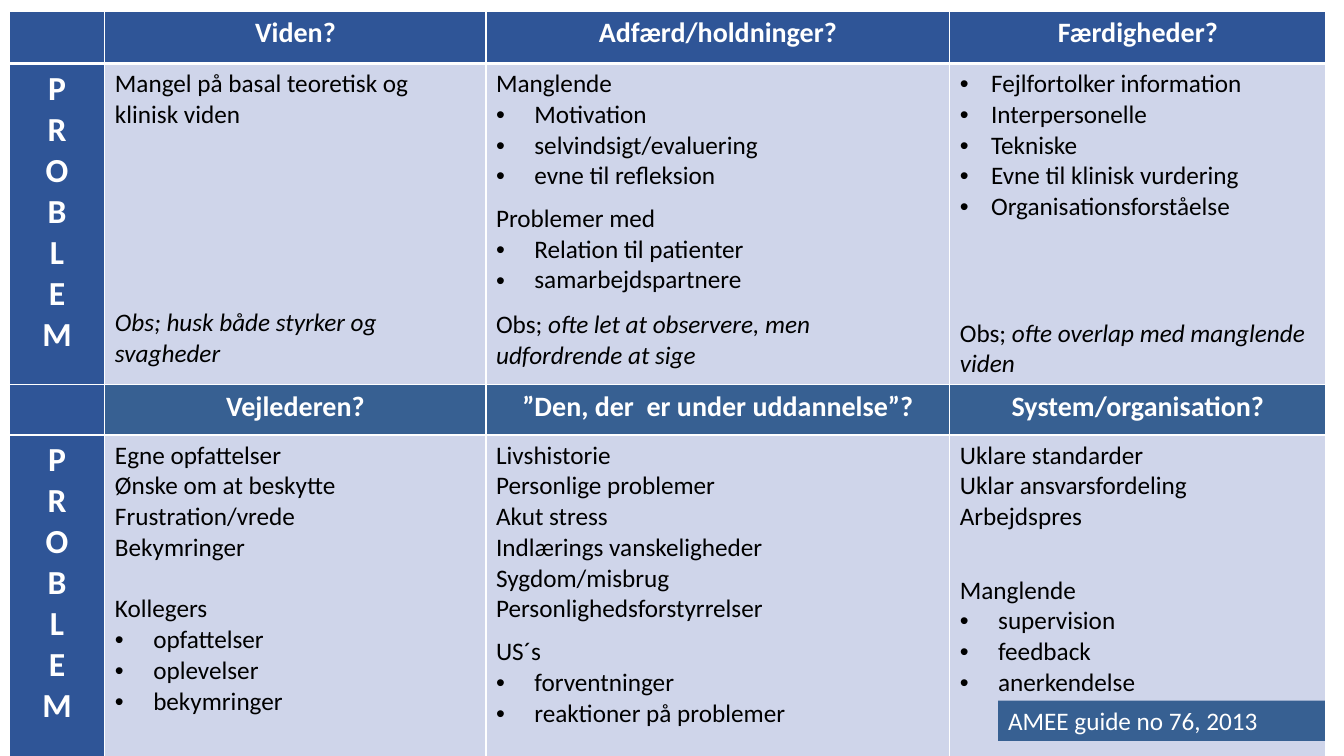
from dataclasses import dataclass

from lxml.etree import SubElement
from pptx import Presentation
from pptx.dml.color import RGBColor
from pptx.enum.shapes import MSO_SHAPE
from pptx.enum.text import MSO_ANCHOR, PP_ALIGN
from pptx.oxml.ns import qn
from pptx.util import Inches, Pt

FONT = "Calibri"
WHITE = RGBColor(0xFF, 0xFF, 0xFF)
BLACK = RGBColor(0x00, 0x00, 0x00)
NAVY = RGBColor(0x2F, 0x55, 0x97)
STEEL = RGBColor(0x37, 0x60, 0x92)
PALE = RGBColor(0xCF, 0xD5, 0xEA)

COLUMN_WIDTHS = [0.95, 3.78, 4.6, 3.73]
ROW_HEIGHTS = [0.52, 2.88, 0.5, 3.2]
SIDE_LABEL = "PROBLEM"


@dataclass
class Line:
    text: str
    gap: float = 0  # points above the line
    indent: float = 0  # bullet indent in inches
    lead: str = ""  # upright words before italic text
    italic: bool = False


def bullets(*texts, indent=0.38):
    return [Line(text, indent=indent) for text in texts]


def plain(*texts):
    return [Line(text) for text in texts]


# Each section: header fill, headings, and the lines under each heading
SECTIONS = [
    (NAVY, ["Viden?", "Adfærd/holdninger?", "Færdigheder?"], [
        [Line("Mangel på basal teoretisk og klinisk viden"),
         Line("Obs; husk både styrker og svagheder", gap=127, italic=True)],
        [Line("Manglende"),
         *bullets("Motivation", "selvindsigt/evaluering", "evne til refleksion"),
         Line("Problemer med", gap=8.5),
         *bullets("Relation til patienter", "samarbejdspartnere"),
         Line("ofte let at observere, men udfordrende at sige",
              gap=9.8, lead="Obs; ", italic=True)],
        [*bullets("Fejlfortolker information", "Interpersonelle", "Tekniske",
                  "Evne til klinisk vurdering", "Organisationsforståelse", indent=0.31),
         Line("ofte overlap med manglende viden", gap=68.4, lead="Obs; ", italic=True)],
    ]),
    (STEEL, ["Vejlederen?", "”Den, der  er under uddannelse”?", "System/organisation?"], [
        [*plain("Egne opfattelser", "Ønske om at beskytte", "Frustration/vrede", "Bekymringer"),
         Line("Kollegers", gap=22),
         *bullets("opfattelser", "oplevelser", "bekymringer")],
        [*plain("Livshistorie", "Personlige problemer", "Akut stress",
                "Indlærings vanskeligheder", "Sygdom/misbrug", "Personlighedsforstyrrelser"),
         Line("US´s", gap=8.5),
         *bullets("forventninger", "reaktioner på problemer")],
        [*plain("Uklare standarder", "Uklar ansvarsfordeling", "Arbejdspres"),
         Line("Manglende", gap=30.5),
         *bullets("supervision", "feedback", "anerkendelse")],
    ]),
]


def style_cell(cell, color, top=1, bottom=1):
    """Draw white borders, then fill the cell."""
    properties = cell._tc.get_or_add_tcPr()
    for side, width in (("L", 1), ("R", 1), ("T", top), ("B", bottom)):
        border = SubElement(properties, qn(f"a:ln{side}"), w=str(Pt(width)))
        border_fill = SubElement(border, qn("a:solidFill"))
        SubElement(border_fill, qn("a:srgbClr"), val=str(WHITE))
    cell.fill.solid()
    cell.fill.fore_color.rgb = color


def set_font(paragraph, size, color, bold=False):
    font = paragraph.font
    font.name, font.size, font.bold = FONT, Pt(size), bold
    font.color.rgb = color


def add_bullet(paragraph, indent):
    properties = paragraph._p.get_or_add_pPr()
    properties.set("marL", str(Inches(indent)))
    properties.set("indent", str(-Inches(indent)))
    bullet_font = SubElement(properties, qn("a:buFont"), typeface="Arial")
    bullet_font.addnext(bullet_font.makeelement(qn("a:buChar"), {"char": "•"}))


def write_lines(frame, lines, size, color, bold=False, align=PP_ALIGN.LEFT):
    for index, line in enumerate(lines):
        paragraph = frame.paragraphs[0] if index == 0 else frame.add_paragraph()
        paragraph.alignment = align
        if line.gap:
            paragraph.space_before = Pt(line.gap)
        if line.indent:
            add_bullet(paragraph, line.indent)
        set_font(paragraph, size, color, bold)
        if line.lead:
            paragraph.add_run().text = line.lead
        words = paragraph.add_run()
        words.text = line.text
        if line.italic:
            words.font.italic = True


def add_problem_table(slide, left, top, width, height):
    table = slide.shapes.add_table(
        len(ROW_HEIGHTS), len(COLUMN_WIDTHS),
        Inches(left), Inches(top), Inches(width), Inches(height)).table
    for column, column_width in zip(table.columns, COLUMN_WIDTHS):
        column.width = Inches(column_width)
    for row, row_height in zip(table.rows, ROW_HEIGHTS):
        row.height = Inches(row_height)

    for section, (header_color, headings, bodies) in enumerate(SECTIONS):
        header_row = 2 * section
        body_row = header_row + 1
        rule = 3 if section == 0 else 1  # heavy rule below the top header

        # Side column
        style_cell(table.cell(header_row, 0), NAVY, bottom=rule)
        side = table.cell(body_row, 0)
        style_cell(side, NAVY, top=rule)
        write_lines(side.text_frame, plain(*SIDE_LABEL), 24, WHITE, True, PP_ALIGN.CENTER)

        # Headings and their content
        for column, (heading, lines) in enumerate(zip(headings, bodies), start=1):
            header = table.cell(header_row, column)
            style_cell(header, header_color, bottom=rule)
            write_lines(header.text_frame, plain(heading), 20, WHITE, True, PP_ALIGN.CENTER)
            body = table.cell(body_row, column)
            style_cell(body, PALE, top=rule)
            write_lines(body.text_frame, lines, 18, BLACK)


def add_reference(slide, left, top, width, height):
    reference = slide.shapes.add_shape(
        MSO_SHAPE.RECTANGLE, Inches(left), Inches(top), Inches(width), Inches(height))
    reference.shadow.inherit = False
    reference.fill.solid()
    reference.fill.fore_color.rgb = STEEL
    reference.line.fill.background()
    frame = reference.text_frame
    frame.word_wrap = True
    frame.vertical_anchor = MSO_ANCHOR.TOP
    write_lines(frame, plain("AMEE guide no 76, 2013"), 18, WHITE)


def main():
    presentation = Presentation()
    presentation.slide_width = Inches(13.33)
    presentation.slide_height = Inches(7.5)
    slide = presentation.slides.add_slide(presentation.slide_layouts[6])
    add_problem_table(slide, 0.09, 0.11, sum(COLUMN_WIDTHS), sum(ROW_HEIGHTS))
    add_reference(slide, 9.9, 6.95, 3.24, 0.4)
    presentation.save("out.pptx")


if __name__ == "__main__":
    main()
